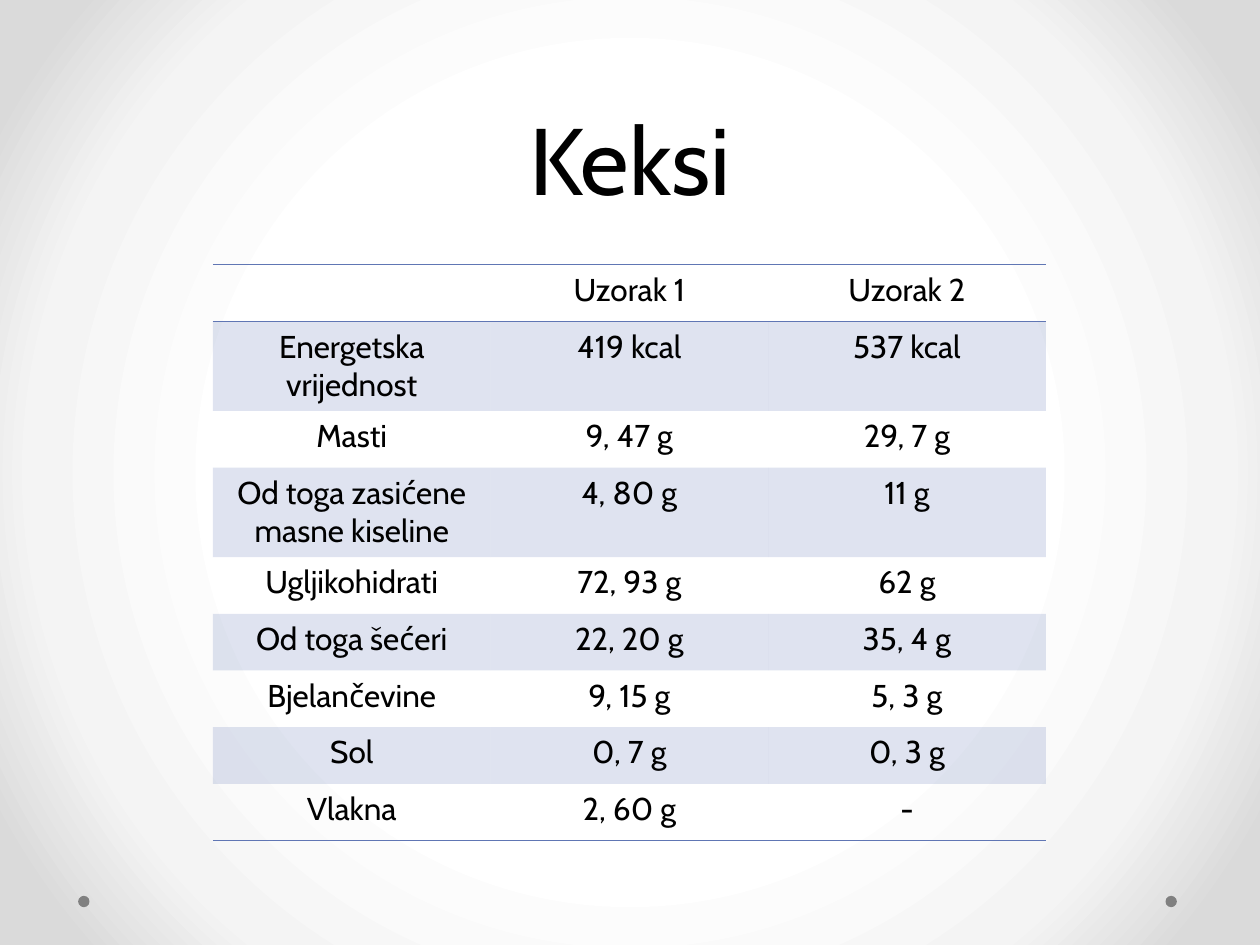
from pptx import Presentation
from pptx.dml.color import RGBColor
from pptx.enum.shapes import MSO_SHAPE
from pptx.enum.text import MSO_ANCHOR, PP_ALIGN
from pptx.oxml import parse_xml
from pptx.oxml.ns import nsdecls
from pptx.util import Inches, Pt

OVAL = MSO_SHAPE.OVAL
BOTTOM = MSO_ANCHOR.BOTTOM
CENTER = PP_ALIGN.CENTER

BLACK = RGBColor(0x00, 0x00, 0x00)
GRAY = RGBColor(0x80, 0x80, 0x80)
BLUE = RGBColor(0x60, 0x76, 0xB4)
BACKGROUND_STOPS = (
    (50, RGBColor(0xFF, 0xFF, 0xFF)),
    (76, RGBColor(0xF4, 0xF4, 0xF4)),
    (92, RGBColor(0xDA, 0xDA, 0xDA)),
)
BAND_OPACITY = 20

NUTRITION_ROWS = (
    ("", "Uzorak 1", "Uzorak 2"),
    ("Energetska vrijednost", "419 kcal", "537 kcal"),
    ("Masti", "9, 47 g", "29, 7 g"),
    ("Od toga zasićene masne kiseline", "4, 80 g", "11 g"),
    ("Ugljikohidrati", "72, 93 g", "62 g"),
    ("Od toga šećeri", "22, 20 g", "35, 4 g"),
    ("Bjelančevine", "9, 15 g", "5, 3 g"),
    ("Sol", "0, 7 g", "0, 3 g"),
    ("Vlakna", "2, 60 g", "-"),
)


class SlideBuilder:
    font_name = "Cabin"

    def __init__(self, slide):
        self.slide = slide

    def background(self, stops):
        """Fill the slide with a circular gradient from its centre."""
        stop_xml = "".join(
            f'<a:gs pos="{position * 1000}"><a:srgbClr val="{color}"/></a:gs>'
            for position, color in stops
        )
        self.slide.element.cSld.insert(0, parse_xml(
            f'<p:bg {nsdecls("p", "a")}><p:bgPr>'
            f'<a:gradFill rotWithShape="1"><a:gsLst>{stop_xml}</a:gsLst>'
            '<a:path path="circle">'
            '<a:fillToRect l="50000" t="50000" r="50000" b="50000"/></a:path>'
            '</a:gradFill><a:effectLst/></p:bgPr></p:bg>'
        ))

    def format_paragraph(self, paragraph, size):
        paragraph.alignment = CENTER
        for run in paragraph.runs:
            run.font.name = self.font_name
            run.font.size = Pt(size)
            run.font.bold = False
            run.font.color.rgb = BLACK

    def title(self, text, left, top, width, height):
        title = self.slide.shapes.title
        title.left, title.top = Inches(left), Inches(top)
        title.width, title.height = Inches(width), Inches(height)
        title.text_frame.text = text
        title.text_frame.vertical_anchor = BOTTOM
        paragraph = title.text_frame.paragraphs[0]
        paragraph.line_spacing = Pt(58)
        self.format_paragraph(paragraph, 54)

    def dot(self, left, top, diameter):
        dot = self.slide.shapes.add_shape(
            OVAL, Inches(left), Inches(top), Inches(diameter), Inches(diameter))
        dot.shadow.inherit = False
        dot.fill.solid()
        dot.fill.fore_color.rgb = GRAY
        dot.line.fill.background()

    def cell_borders(self, cell, ruled_sides):
        """Rule the named sides (T, B) in blue and clear the others."""
        properties = cell._tc.get_or_add_tcPr()
        for side in "LRTB":
            if side in ruled_sides:
                fill = f'<a:solidFill><a:srgbClr val="{BLUE}"/></a:solidFill>'
            else:
                fill = "<a:noFill/>"
            properties.append(parse_xml(
                f'<a:ln{side} {nsdecls("a")} w="{Pt(1)}">{fill}</a:ln{side}>'))

    def cell_fill(self, cell, banded):
        if not banded:
            cell.fill.background()
            return
        cell.fill.solid()
        cell.fill.fore_color.rgb = BLUE
        color = cell._tc.tcPr.find(".//{*}solidFill[last()]/{*}srgbClr")
        for color in cell._tc.tcPr.xpath("./a:solidFill/a:srgbClr"):
            color.append(parse_xml(
                f'<a:alpha {nsdecls("a")} val="{BAND_OPACITY * 1000}"/>'))

    def table(self, rows, left, top, width, row_height):
        table = self.slide.shapes.add_table(
            len(rows), len(rows[0]), Inches(left), Inches(top),
            Inches(width), Inches(row_height * len(rows))).table
        table.first_row = table.horz_banding = False
        ruled_sides = {0: "TB", 1: "T", len(rows) - 1: "B"}
        for row_index, texts in enumerate(rows):
            for column_index, text in enumerate(texts):
                cell = table.cell(row_index, column_index)
                cell.text_frame.text = text
                self.format_paragraph(cell.text_frame.paragraphs[0], 18)
                self.cell_borders(cell, ruled_sides.get(row_index, ""))
                self.cell_fill(cell, banded=row_index % 2 == 1)


def main():
    presentation = Presentation()
    presentation.slide_width = Inches(10)
    presentation.slide_height = Inches(7.5)
    title_only_layout = presentation.slide_layouts[5]
    builder = SlideBuilder(presentation.slides.add_slide(title_only_layout))

    builder.background(BACKGROUND_STOPS)
    for left in (9.25, 0.62):
        builder.dot(left, 7.11, 0.09)
    builder.title("Keksi", 0.5, 0, 9, 1.75)
    builder.table(NUTRITION_ROWS, 1.69, 2.1, 6.61, 0.45)
    presentation.save("out.pptx")


if __name__ == "__main__":
    main()
